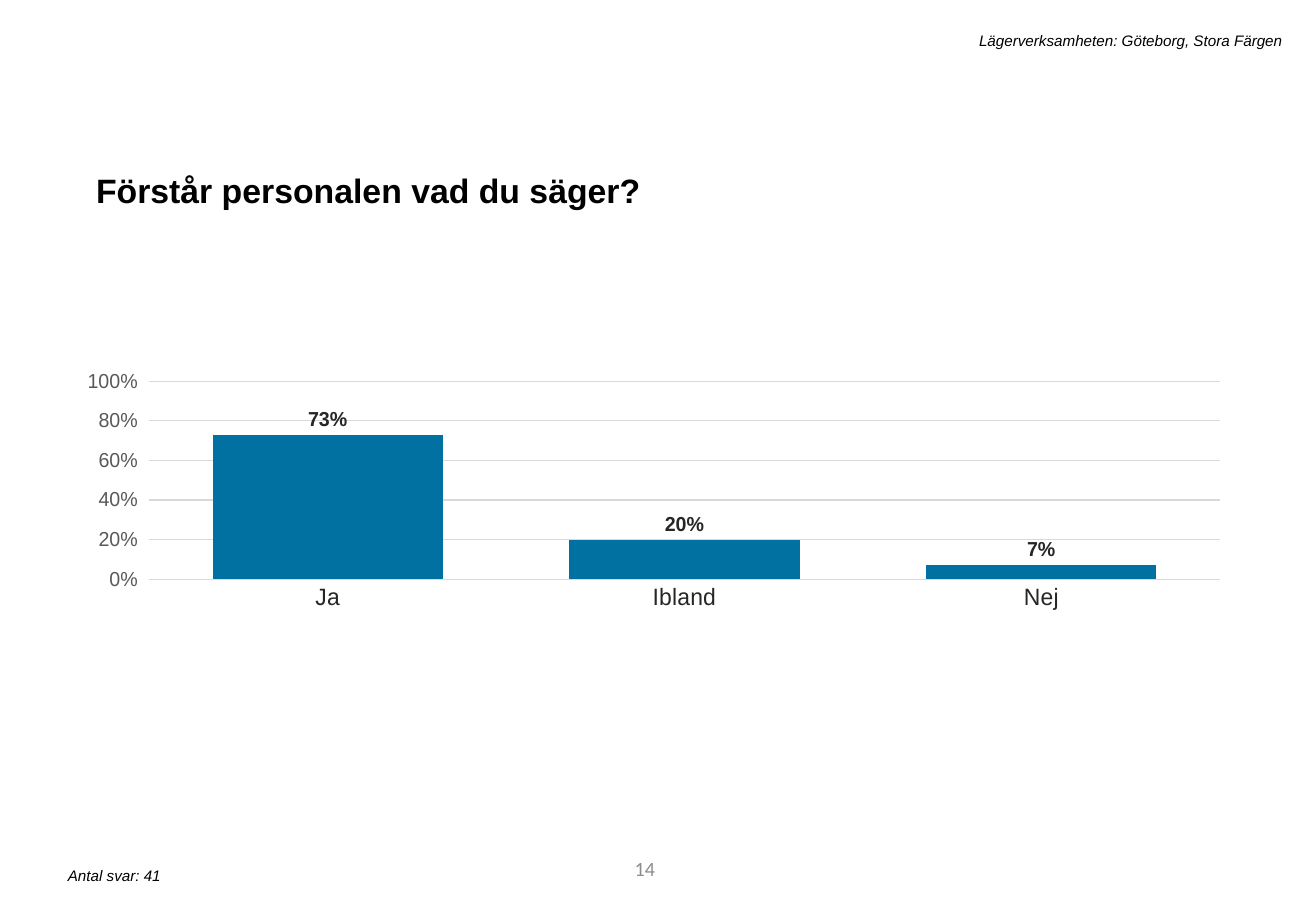
from lxml import etree
from pptx import Presentation
from pptx.chart.data import CategoryChartData
from pptx.dml.color import RGBColor
from pptx.enum.chart import XL_CHART_TYPE, XL_LABEL_POSITION, XL_TICK_MARK
from pptx.enum.text import MSO_ANCHOR, MSO_AUTO_SIZE, PP_ALIGN
from pptx.oxml.ns import qn
from pptx.util import Inches, Pt

LEFT, RIGHT = PP_ALIGN.LEFT, PP_ALIGN.RIGHT
TOP, MIDDLE = MSO_ANCHOR.TOP, MSO_ANCHOR.MIDDLE
GROW = MSO_AUTO_SIZE.SHAPE_TO_FIT_TEXT
COLUMNS = XL_CHART_TYPE.COLUMN_CLUSTERED
OUTSIDE_END = XL_LABEL_POSITION.OUTSIDE_END
TICK_NONE, TICK_OUT = XL_TICK_MARK.NONE, XL_TICK_MARK.OUTSIDE

BLACK, DARK, GREY, PALE = "000000", "262626", "595959", "D9D9D9"
BLUE, NUMBER_GREY = "0071A1", "8C8C8C"
TITLE_ONLY = 5


def rgb(value):
    return RGBColor.from_string(value)


class SurveySlide:
    font = "Arial"

    def __init__(self, prs):
        self.slide = prs.slides.add_slide(prs.slide_layouts[TITLE_ONLY])

    def style(self, font, size, color=BLACK, bold=False, italic=False, name=None):
        font.name = name or self.font
        font.size = Pt(size)
        font.bold, font.italic = bold, italic
        font.color.rgb = rgb(color)

    def fill_text(self, sp, text, size, align=LEFT, anchor=TOP, **look):
        """Put one styled paragraph into a shape and return the paragraph."""
        tf = sp.text_frame
        tf.word_wrap = True
        tf.auto_size = GROW if anchor == TOP else MSO_AUTO_SIZE.NONE
        tf.vertical_anchor = anchor
        p = tf.paragraphs[0]
        p.alignment = align
        r = p.add_run()
        r.text = text
        self.style(r.font, size, **look)
        return p

    def title(self, text, left, top, width, height):
        sp = self.slide.shapes.title
        sp.left, sp.top = Inches(left), Inches(top)
        sp.width, sp.height = Inches(width), Inches(height)
        p = self.fill_text(sp, text, 20, bold=True)
        p.line_spacing = 1.2
        p.space_before = Pt(10)

    def text(self, text, left, top, width, height, size=9, **look):
        sp = self.slide.shapes.add_textbox(
            Inches(left), Inches(top), Inches(width), Inches(height))
        self.fill_text(sp, text, size, **look)

    def column_chart(self, answers, left, top, width, height, plot):
        data = CategoryChartData(number_format="0%")
        data.categories = list(answers)
        data.add_series("Series 1", list(answers.values()))
        chart = self.slide.shapes.add_chart(
            COLUMNS, Inches(left), Inches(top), Inches(width), Inches(height), data).chart
        chart.has_legend = chart.has_title = False
        self.style(chart.font, 10)
        self.place_plot(chart, plot)

        columns = chart.plots[0]
        columns.gap_width = 55
        columns.vary_by_categories = False
        series = columns.series[0]
        series.format.fill.solid()
        series.format.fill.fore_color.rgb = rgb(BLUE)
        labels = series.data_labels
        labels.show_value = True
        labels.position = OUTSIDE_END
        labels.number_format = "0%"
        labels.number_format_is_linked = False
        self.style(labels.font, 12, DARK, bold=True)

        cat, val = chart.category_axis, chart.value_axis
        cat.major_tick_mark = TICK_NONE
        self.style(cat.tick_labels.font, 14, DARK)
        val.minimum_scale, val.maximum_scale, val.major_unit = 0, 1, 0.2
        val.major_tick_mark = TICK_OUT
        val.tick_labels.number_format = "0%"
        val.tick_labels.number_format_is_linked = False
        self.style(val.tick_labels.font, 12, GREY)
        val.format.line.fill.background()
        for line in (cat.format.line, val.major_gridlines.format.line):
            line.color.rgb = rgb(PALE)
            line.width = Pt(0.75)

    def place_plot(self, chart, plot):
        """Fix the inner plot area as fractions of the chart: x, y, w, h."""
        area = chart.plots[0]._element.getparent()
        for old in area.findall(qn("c:layout")):
            area.remove(old)
        layout = etree.Element(qn("c:layout"))
        area.insert(0, layout)
        manual = etree.SubElement(layout, qn("c:manualLayout"))
        settings = [("layoutTarget", "inner"), ("xMode", "edge"), ("yMode", "edge")]
        for tag, value in settings + list(zip("xywh", plot)):
            etree.SubElement(manual, qn("c:" + tag)).set("val", str(value))


def main():
    prs = Presentation()
    prs.slide_width, prs.slide_height = Inches(10.83), Inches(7.5)

    s = SurveySlide(prs)
    s.title("Förstår personalen vad du säger?", 0.69, 1.28, 9.4, 0.47)
    s.text("Lägerverksamheten: Göteborg, Stora Färgen", 1.79, 0.21, 8.86, 0.25,
           align=RIGHT, italic=True)
    s.column_chart({"Ja": 0.73, "Ibland": 0.2, "Nej": 0.07}, 0.72, 2.53, 9.4, 3.95,
                   plot=(0.025, 0.154, 0.966, 0.413))
    s.text("Antal svar: 41", 0.46, 7.08, 4.41, 0.25, italic=True)
    s.text("14", 3.05, 6.95, 2.44, 0.4, size=12, align=RIGHT, anchor=MIDDLE,
           color=NUMBER_GREY, name="Calibri")
    prs.save("out.pptx")


if __name__ == "__main__":
    main()
